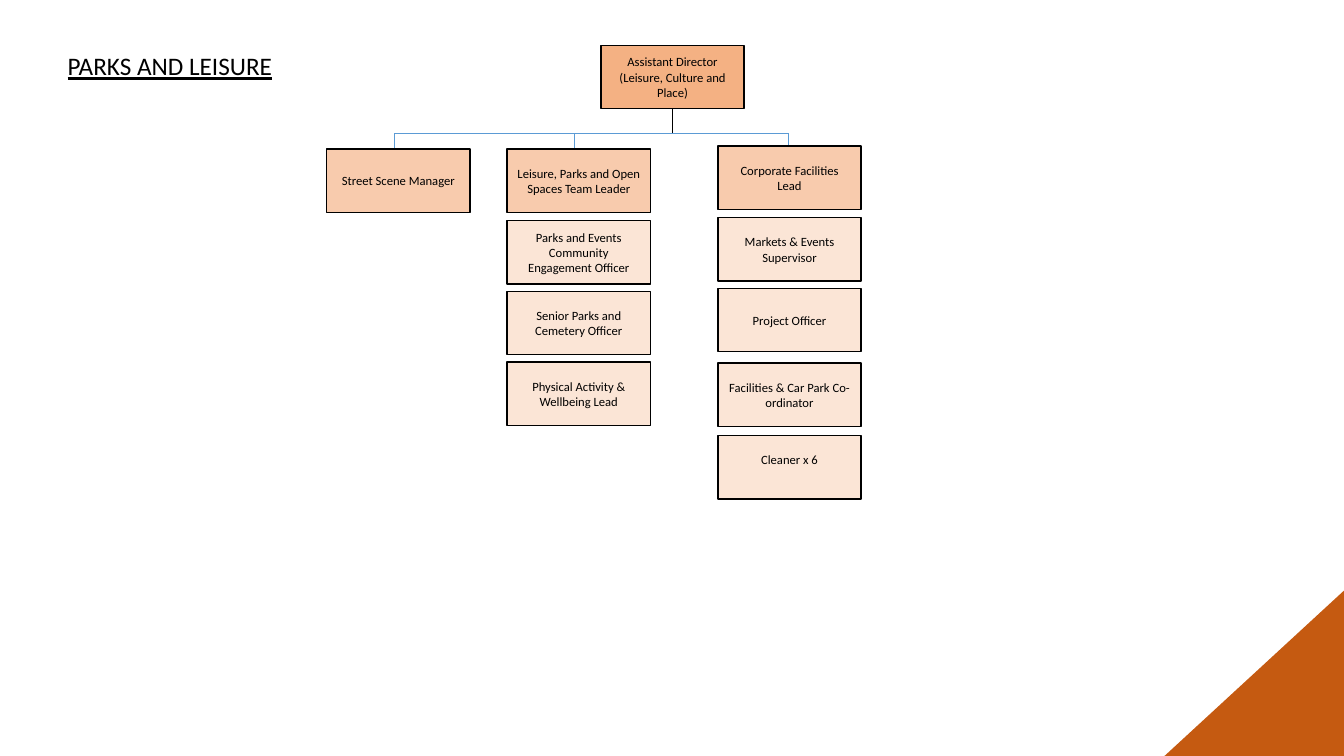
from dataclasses import dataclass

from lxml import etree
from pptx import Presentation
from pptx.dml.color import RGBColor
from pptx.enum import shapes, text
from pptx.oxml.ns import qn
from pptx.slide import Slide
from pptx.util import Emu, Pt

PX = 9144  # 100 px to the inch
BOX_W, BOX_H = 142, 63
BUS_Y = 132
FONT = "Calibri"

BLACK = RGBColor(0x00, 0x00, 0x00)
BLUE = RGBColor(0x5B, 0x9B, 0xD5)
DIRECTOR_FILL = RGBColor(0xF4, 0xB1, 0x83)
LEAD_FILL = RGBColor(0xF8, 0xCB, 0xAD)
STAFF_FILL = RGBColor(0xFB, 0xE5, 0xD6)
CORNER_FILL = RGBColor(0xC5, 0x5A, 0x11)


@dataclass(frozen=True)
class Post:
    label: str
    top: int
    bottom_inset: int = 5


@dataclass(frozen=True)
class Team:
    """A column of posts, the lead first, hung from the bus at drop_x."""
    left: int
    drop_x: int
    posts: tuple[Post, ...]


DIRECTOR = Post("Assistant Director (Leisure, Culture and Place)", 45)
DIRECTOR_LEFT = 596

TEAMS = (
    Team(324, 391, (Post("Street Scene Manager", 148),)),
    Team(503, 570, (
        Post("Leisure, Parks and Open Spaces Team Leader", 148),
        Post("Parks and Events Community Engagement Officer", 219),
        Post("Senior Parks and Cemetery Officer", 289),
        Post("Physical Activity & Wellbeing Lead", 359),
    )),
    Team(712, 782, (
        Post("Corporate Facilities Lead", 145),
        Post("Markets & Events Supervisor", 216),
        Post("Project Officer", 286),
        Post("Facilities & Car Park Co-ordinator", 360),
        Post("Cleaner x 6", 432, bottom_inset=20),
    )),
)


def px(n: int) -> Emu:
    return Emu(n * PX)


def add_line(slide: Slide, x1: int, y1: int, x2: int, y2: int, color: RGBColor) -> None:
    line = slide.shapes.add_connector(
        shapes.MSO_CONNECTOR.STRAIGHT, px(x1), px(y1), px(x2), px(y2))
    line.line.color.rgb = color
    line.line.width = Pt(0.5)
    etree.SubElement(line._element.spPr, qn("a:effectLst"))


def add_post(slide: Slide, post: Post, left: int, fill: RGBColor) -> None:
    sp = slide.shapes.add_shape(
        shapes.MSO_SHAPE.RECTANGLE, px(left), px(post.top), px(BOX_W), px(BOX_H))
    sp.shadow.inherit = False
    sp.fill.solid()
    sp.fill.fore_color.rgb = fill
    sp.line.color.rgb = BLACK
    sp.line.width = Pt(1)
    tf = sp.text_frame
    tf.word_wrap = True
    tf.vertical_anchor = text.MSO_ANCHOR.MIDDLE
    tf.margin_bottom = px(post.bottom_inset)
    p = tf.paragraphs[0]
    p.alignment = text.PP_ALIGN.CENTER
    r = p.add_run()
    r.text = post.label
    r.font.name, r.font.size = FONT, Pt(9)
    r.font.color.rgb = BLACK


def set_title(slide: Slide, label: str) -> None:
    title = slide.shapes.title
    title.left, title.top, title.width, title.height = px(57), px(45), px(391), px(40)
    tf = title.text_frame
    tf.word_wrap = True
    tf.auto_size = text.MSO_AUTO_SIZE.NONE
    tf.vertical_anchor = text.MSO_ANCHOR.TOP
    p = tf.paragraphs[0]
    p.alignment = text.PP_ALIGN.LEFT
    r = p.add_run()
    r.text = label
    r.font.name, r.font.size = FONT, Pt(18)
    r.font.underline = True
    r.font.color.rgb = BLACK


def add_corner(slide: Slide) -> None:
    """Triangle with its right angle in the bottom right corner of the slide."""
    sp = slide.shapes.add_shape(
        shapes.MSO_SHAPE.RIGHT_TRIANGLE, px(1155), px(586), px(178), px(164))
    sp.shadow.inherit = False
    sp.fill.solid()
    sp.fill.fore_color.rgb = CORNER_FILL
    sp.line.fill.background()
    sp._element.spPr.find(qn("a:xfrm")).set("flipH", "1")


def main() -> None:
    prs = Presentation()
    prs.slide_width, prs.slide_height = px(1333), px(750)
    slide = prs.slides.add_slide(prs.slide_layouts.get_by_name("Title Only"))
    set_title(slide, "PARKS AND LEISURE")
    add_corner(slide)

    director_x = DIRECTOR_LEFT + BOX_W // 2
    add_line(slide, director_x, DIRECTOR.top + BOX_H, director_x, BUS_Y, BLACK)
    add_line(slide, TEAMS[0].drop_x, BUS_Y, TEAMS[-1].drop_x, BUS_Y, BLUE)
    add_post(slide, DIRECTOR, DIRECTOR_LEFT, DIRECTOR_FILL)

    for team in TEAMS:
        lead, *staff = team.posts
        add_line(slide, team.drop_x, BUS_Y, team.drop_x, lead.top, BLUE)
        add_post(slide, lead, team.left, LEAD_FILL)
        for post in staff:
            add_post(slide, post, team.left, STAFF_FILL)

    prs.save("out.pptx")


if __name__ == "__main__":
    main()
